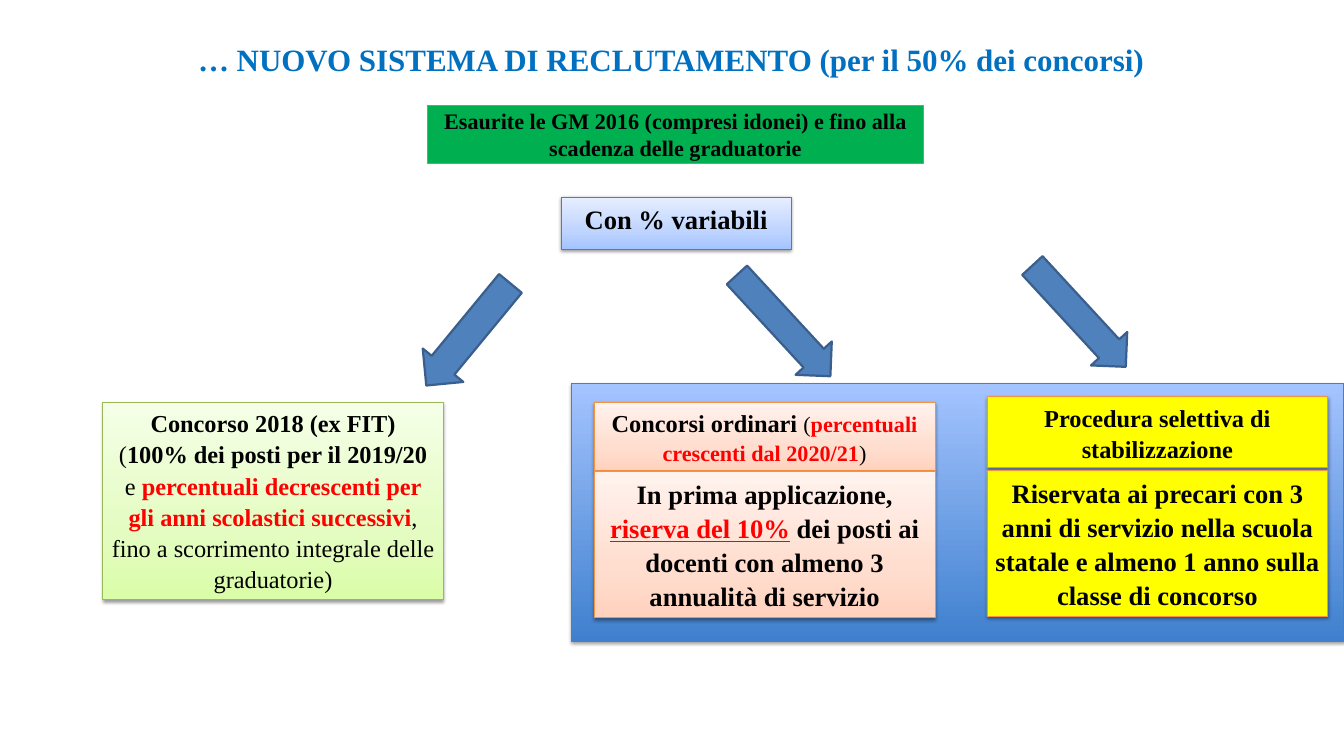
"""Build the slide on the new recruitment system."""
from lxml.etree import SubElement
from pptx import Presentation
from pptx.dml.color import RGBColor
from pptx.enum.shapes import MSO_SHAPE
from pptx.enum.text import MSO_ANCHOR, MSO_AUTO_SIZE, PP_ALIGN
from pptx.oxml.ns import qn
from pptx.util import Pt

FACE = "Times New Roman"
TITLE = "… NUOVO SISTEMA DI RECLUTAMENTO (per il 50% dei concorsi)"
BOLD = {"bold": True}
RED = {"bold": True, "color": "FF0000"}
BIG = {"bold": True, "size": 22}
LINK = {"bold": True, "color": "FF0000", "underline": True}

PANEL = [(0, "3F80CE"), (100, "A4C4FF")]
BLUE = [(0, "A4C4FF"), (35, "BFD4FF"), (100, "E6EEFF")]
LIME = [(0, "DAFDA7"), (35, "E4FCC2"), (100, "F5FFE7")]
PEACH = [(0, "FFD2BD"), (35, "FFDED0"), (100, "FFF2ED")]
GOLD = "FFFF00"

# area, fill, line colour, text size, paragraphs of (text, style) runs
BOXES = [
    ((516, 346.5, 698.6, 233), PANEL, "4B7EBC", 0, []),
    ((507, 178, 208, 47), BLUE, "4B7EBC", 24, [[("Con % variabili", BOLD)]]),
    ((93, 363.5, 307.5, 178.5), LIME, "98B955", 22, [
        [("Concorso 2018 (ex FIT)", BOLD)],
        [("(", {}), ("100% dei posti per il 2019/20", BOLD), (" e ", {}),
         ("percentuali decrescenti per gli anni scolastici successivi", RED),
         (", fino a scorrimento integrale delle graduatorie)", {})]]),
    ((537, 363.5, 308, 62), PEACH, "F69240", 20, [
        [("Concorsi ordinari ", BIG), ("(", {}),
         ("percentuali crescenti dal 2020/21", RED), (")", {})]]),
    ((537, 426, 308, 132), PEACH, "F69240", 24, [
        [("In prima applicazione, ", BOLD), ("riserva del 10%", LINK),
         (" dei posti ai docenti con almeno 3 annualità di servizio", BOLD)]]),
    ((892, 358.5, 308, 64), GOLD, "F69240", 22,
     [[("Procedura selettiva di stabilizzazione", BOLD)]]),
    ((892, 425, 308, 132), GOLD, "F69240", 24, [
        [("Riservata ai precari con 3 anni di servizio nella scuola statale "
          "e almeno 1 anno sulla classe di concorso", BOLD)]]),
]
GREEN = ((386.5, 95, 448, 52.5), "00B050", "70AD47", 20, [
    [("Esaurite le GM 2016 (compresi idonei) e fino alla scadenza "
      "delle graduatorie", BOLD)]])
ARROWS = [
    ((363.5, 278.5, 119.5, 47.5), 129.5),
    ((646, 272, 124.5, 44.5), 47.3),
    ((913, 263.5, 124.5, 44.5), 47.3),
]


def hue(code):
    return RGBColor.from_string(code)


def place(shape, area):
    shape.left, shape.top, shape.width, shape.height = map(Pt, area)


def paint(shape, fill):
    if isinstance(fill, str):
        shape.fill.solid()
        shape.fill.fore_color.rgb = hue(fill)
        return
    shape.fill.gradient()
    shape.fill.gradient_angle = 90
    stops = shape._element.spPr.find(".//" + qn("a:gsLst"))
    for stop in list(stops):
        stops.remove(stop)
    for spot, code in fill:
        stop = SubElement(stops, qn("a:gs"), pos=str(spot * 1000))
        SubElement(stop, qn("a:srgbClr"), val=code)


def shade(shape):
    group = shape._element.spPr.find(qn("a:effectLst"))
    drop = SubElement(group, qn("a:outerShdw"), blurRad=str(Pt(3.1)),
                      dist=str(Pt(1.6)), dir="5400000", rotWithShape="0")
    tint = SubElement(drop, qn("a:srgbClr"), val="000000")
    SubElement(tint, qn("a:alpha"), val="38000")


def style(font, size=None, bold=None, color=None, underline=None):
    if size:
        font.size = Pt(size)
    if color:
        font.color.rgb = hue(color)
    font.bold, font.underline = bold, underline


def write(frame, rows, size, space):
    for i, row in enumerate(rows):
        para = frame.add_paragraph() if i else frame.paragraphs[0]
        para.alignment = PP_ALIGN.CENTER
        para.line_spacing = space
        same = all(look == row[0][1] for _, look in row)
        base = {"size": size, "color": "000000"}
        style(para.font, **(base | row[0][1] if same else base))
        para.font.name = FACE
        for text, look in row:
            run = para.add_run()
            run.text = text
            if not same:
                style(run.font, **look)


def draw(slide, kind, area, fill, edge, width):
    shape = slide.shapes.add_shape(kind, *map(Pt, area))
    paint(shape, fill)
    shape.line.color.rgb = hue(edge)
    shape.line.width = Pt(width)
    shape.shadow.inherit = False
    return shape


def main():
    deck = Presentation()
    deck.slide_width, deck.slide_height = Pt(1214.64), Pt(680.4)
    slide = deck.slides.add_slide(deck.slide_layouts[5])

    title = slide.shapes.title
    place(title, (36, 33, 1140.5, 41))
    frame = title.text_frame
    frame.auto_size = MSO_AUTO_SIZE.NONE
    frame.vertical_anchor = MSO_ANCHOR.MIDDLE
    write(frame, [[(TITLE, {"bold": True, "color": "0070C0"})]], 28, 1.0)

    area, fill, edge, size, rows = GREEN
    note = draw(slide, MSO_SHAPE.RECTANGLE, area, fill, edge, 1)
    write(note.text_frame, rows, size, 1.0)

    for area, fill, edge, size, rows in BOXES:
        box = draw(slide, MSO_SHAPE.RECTANGLE, area, fill, edge, 0.75)
        shade(box)
        box.text_frame.vertical_anchor = MSO_ANCHOR.TOP
        write(box.text_frame, rows, size, 1.07)

    for area, turn in ARROWS:
        arrow = draw(slide, MSO_SHAPE.RIGHT_ARROW, area, "4F81BD", "3A5F8C", 2)
        arrow.adjustments[0] = 0.56
        arrow.rotation = turn

    deck.save("out.pptx")


if __name__ == "__main__":
    main()
